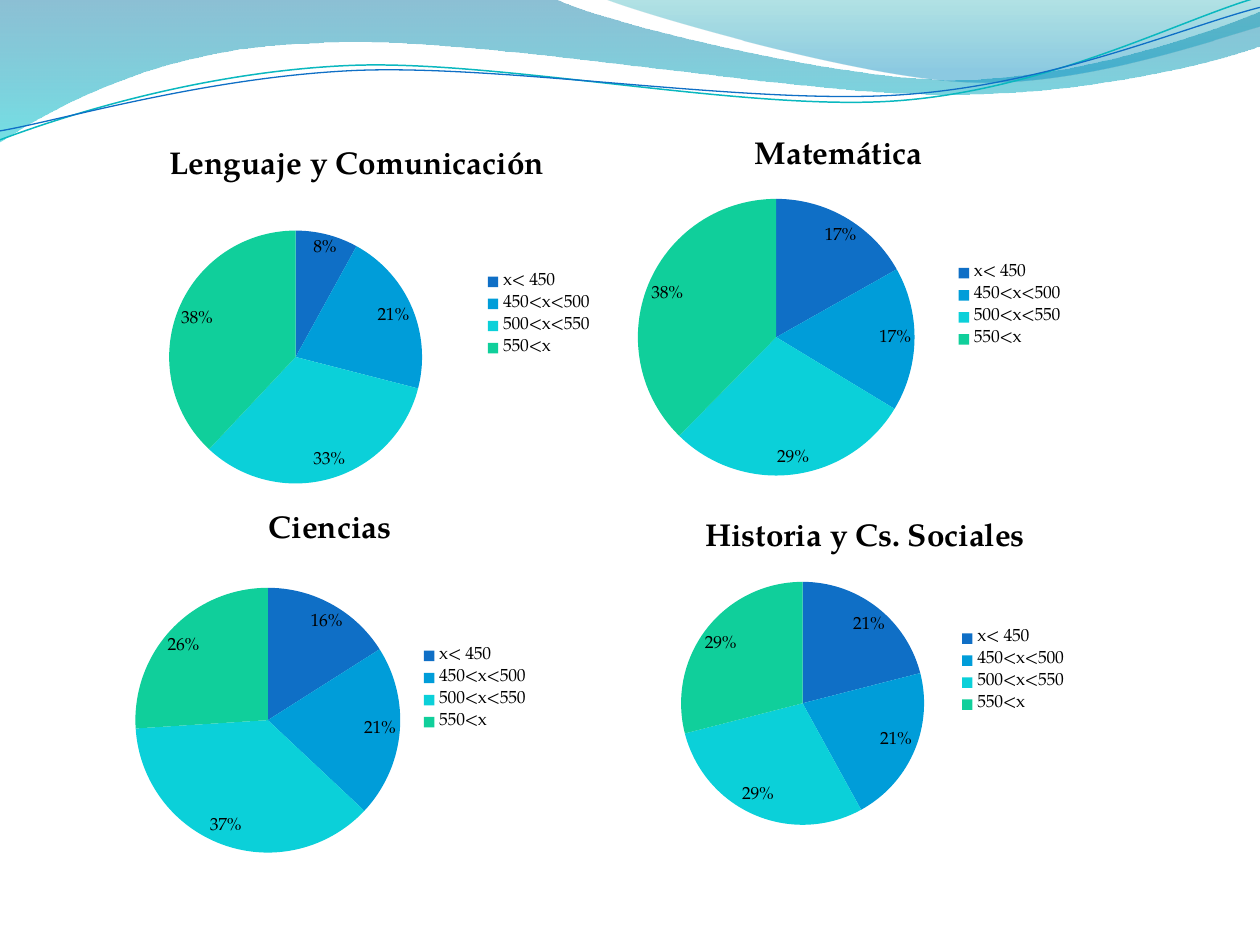
from math import cos, radians, sin

from pptx import Presentation
from pptx.chart.data import CategoryChartData
from pptx.dml.color import RGBColor
from pptx.enum.chart import XL_CHART_TYPE, XL_LABEL_POSITION, XL_LEGEND_POSITION
from pptx.oxml import parse_xml
from pptx.oxml.ns import nsdecls
from pptx.util import Cm, Pt

PIE = XL_CHART_TYPE.PIE
BEST_FIT = XL_LABEL_POSITION.BEST_FIT
RIGHT = XL_LEGEND_POSITION.RIGHT

RANGES = ["x< 450", "450<x<500", "500<x<550", "550<x"]
SUBJECTS = [
    ("Lenguaje y Comunicación", (8, 21, 33, 38),
     (2.18, 2.59, 10.03, 7.52), (5.96, 7.2, 2.55)),
    ("Matemática", (17, 17, 29, 38),
     (12.12, 2.39, 9.58, 7.57), (15.65, 6.8, 2.79)),
    ("Ciencias", (16, 21, 37, 26),
     (2.39, 9.93, 8.53, 7.92), (5.4, 14.52, 2.67)),
    ("Historia y Cs. Sociales", (21, 21, 29, 29),
     (13.11, 10.11, 8.66, 6.86), (16.18, 14.18, 2.45)),
]

LEFT_WAVE = [
    (0, 0), (11.18, -0.03),
    (12.09, 0.43, 16.87, 1.6, 19.25, 1.6),
    (21.67, 1.6, 24.33, 0.66, 25.4, 0.23), (25.43, 0.91),
    (24.97, 1.12, 22.1, 1.93, 18.95, 1.9),
    (15.8, 1.9, 9.7, 0.71, 6.53, 0.86),
    (3.28, 0.91, 1.17, 2.11, -0.03, 2.87), (0, 0),
]
RIGHT_WAVE = [
    (12.17, -0.03),
    (12.93, 0.28, 17.32, 1.57, 19.53, 1.65),
    (21.74, 1.75, 24.41, 0.81, 25.4, 0.53), (25.4, 0), (12.17, -0.03),
]
TEAL_CURVE = [
    (0, 2.82),
    (1.22, 2.36, 4.01, 1.45, 7.04, 1.32),
    (10.03, 1.19, 15.06, 2.26, 18.11, 2.03),
    (21.16, 1.8, 23.83, 0.38, 25.35, -0.05),
]
BLUE_CURVE = [
    (0, 2.64),
    (1.19, 2.44, 4.17, 1.55, 7.19, 1.42),
    (10.24, 1.3, 15.16, 2.13, 18.21, 1.91),
    (21.23, 1.7, 23.9, 0.53, 25.4, 0.15),
]


def rgb(value):
    return RGBColor.from_string(value)


def turn(point, center, angle):
    x, y = point[0] - center[0], point[1] - center[1]
    a = radians(angle)
    return (center[0] + x * cos(a) - y * sin(a),
            center[1] + x * sin(a) + y * cos(a))


class Deck:
    font = "TeX Gyre Pagella"
    ink = "000000"
    slices = ("0F6FC6", "009DD9", "0BD0D9", "10CF9B")
    tilt = 2.7

    def __init__(self, prs):
        self.s = prs.slides.add_slide(prs.slide_layouts[6])

    def outline(self, steps, close, center=(0, 0), angle=0):
        points = [turn(step[i:i + 2], center, angle)
                  for step in steps for i in range(0, len(step), 2)]
        points = [(Cm(x), Cm(y)) for x, y in points]
        builder = self.s.shapes.build_freeform(*points[0])
        builder.add_line_segments(points[1:], close=close)
        sp = builder.convert_to_shape()
        sp.shadow.inherit = False
        sp.rotation = -angle
        lines = iter(sp._element.xpath(".//a:lnTo"))
        for step in steps[1:]:
            group = [next(lines) for _ in range(len(step) // 2)]
            if len(group) == 3:
                bezier = parse_xml(f'<a:cubicBezTo {nsdecls("a")}/>')
                group[0].addprevious(bezier)
                for line in group:
                    bezier.append(line[0])
                    line.getparent().remove(line)
        return sp

    def wave(self, steps, stops):
        sp = self.outline(steps, True)
        sp.line.fill.background()
        sp.fill.gradient()
        sp.fill.gradient_angle = 270
        for stop, (position, color, _) in zip(sp.fill.gradient_stops, stops):
            stop.position = position
            stop.color.rgb = rgb(color)
        for clr, (_, _, alpha) in zip(sp._element.xpath(".//a:gs/a:srgbClr"), stops):
            clr.append(parse_xml(f'<a:alpha {nsdecls("a")} val="{alpha * 1000}"/>'))

    def curve(self, steps, center, color, width):
        sp = self.outline(steps, False, center, self.tilt)
        sp.fill.background()
        sp.line.color.rgb = rgb(color)
        sp.line.width = Pt(width)

    def style(self, font, size, bold=False):
        font.name = self.font
        font.size = Pt(size)
        font.bold = bold
        font.color.rgb = rgb(self.ink)

    def place_pie(self, chart, box, circle):
        left, top, width, height = box
        cx, cy, radius = circle
        fractions = {
            "x": (cx - radius - left) / width,
            "y": (cy - radius - top) / height,
            "w": 2 * radius / width,
            "h": 2 * radius / height,
        }
        values = "".join(f'<c:{k} val="{v:.4f}"/>' for k, v in fractions.items())
        area = chart._chartSpace.xpath("c:chart/c:plotArea")[0]
        for old in area.xpath("c:layout"):
            area.remove(old)
        area.insert(0, parse_xml(
            f'<c:layout {nsdecls("c")}><c:manualLayout>'
            '<c:layoutTarget val="inner"/><c:xMode val="edge"/><c:yMode val="edge"/>'
            f'{values}</c:manualLayout></c:layout>'))

    def pie(self, title, values, box, circle):
        data = CategoryChartData()
        data.categories = RANGES
        data.add_series(title, values)
        chart = self.s.shapes.add_chart(PIE, *map(Cm, box), data).chart
        self.style(chart.font, 10)
        chart.has_title = True
        r = chart.chart_title.text_frame.paragraphs[0].add_run()
        r.text = title
        self.style(r.font, 18, True)
        chart.chart_title.include_in_layout = False
        chart.has_legend = True
        chart.legend.position = RIGHT
        chart.legend.include_in_layout = False
        plot = chart.plots[0]
        plot.vary_by_categories = True
        for i, color in enumerate(self.slices):
            fmt = plot.series[0].points[i].format
            fmt.fill.solid()
            fmt.fill.fore_color.rgb = rgb(color)
            fmt.line.fill.background()
        labels = plot.series[0].data_labels
        labels.show_value = False
        labels.show_percentage = True
        labels.number_format = "0%"
        labels.number_format_is_linked = False
        labels.position = BEST_FIT
        self.style(labels.font, 10)
        self.place_pie(chart, box, circle)


def main():
    prs = Presentation()
    prs.slide_width, prs.slide_height = Cm(25.4), Cm(19.05)
    deck = Deck(prs)
    deck.wave(LEFT_WAVE, [(0, "0074A1", 45), (1, "00C6CF", 55)])
    deck.wave(RIGHT_WAVE, [(0, "00A1A9", 30), (0.8, "008BBF", 45)])
    deck.curve(TEAL_CURVE, (12.67, 1.42), "0AB8BF", 0.85)
    deck.curve(BLUE_CURVE, (12.69, 1.46), "0F6FC6", 0.75)
    for subject in SUBJECTS:
        deck.pie(*subject)
    prs.save("out.pptx")


if __name__ == "__main__":
    main()
